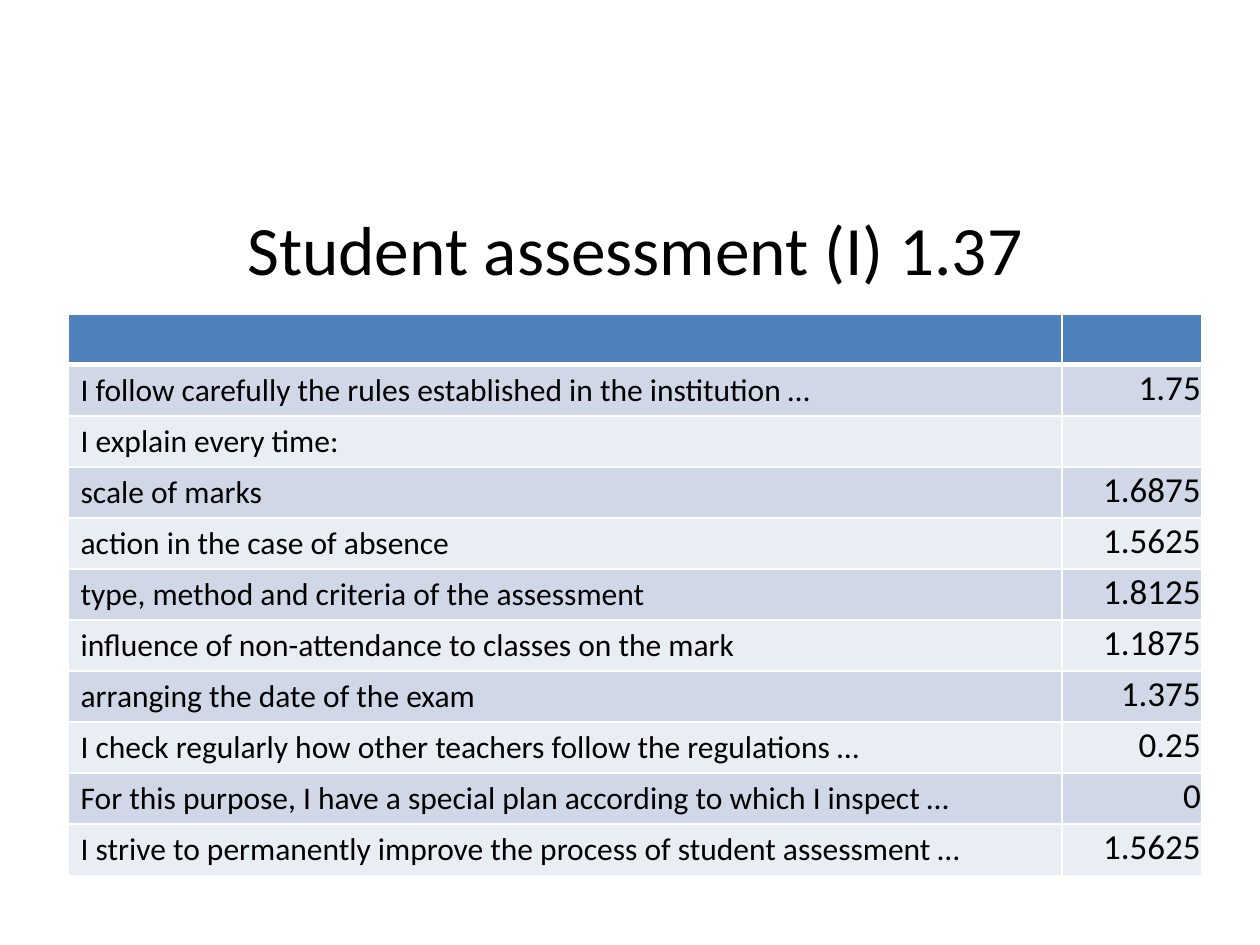
from typing import NamedTuple

from lxml.etree import SubElement
from pptx import Presentation
from pptx.dml.color import RGBColor
from pptx.enum.text import MSO_ANCHOR as Anchor, PP_ALIGN as Align
from pptx.oxml.ns import qn
from pptx.util import Inches, Pt

BLACK = RGBColor(0x00, 0x00, 0x00)
WHITE = RGBColor(0xFF, 0xFF, 0xFF)
HEADER_BLUE = RGBColor(0x4F, 0x81, 0xBD)
BAND_FILLS = (RGBColor(0xD0, 0xD8, 0xE8), RGBColor(0xE9, 0xED, 0xF4))

LEFT, WIDTH = Inches(0.54), Inches(9)
TABLE_TOP, TABLE_HEIGHT = Inches(2.49), Inches(4.46)
COLUMN_WIDTHS = (Inches(7.89), Inches(1.11))

SCORE_FORMAT = {
    "vertical_anchor": Anchor.BOTTOM,
    "margin_left": Inches(0.01),
    "margin_top": Inches(0.01),
    "margin_right": Inches(0.01),
    "margin_bottom": Inches(0.05),
}


class Item(NamedTuple):
    statement: str
    score: str = ""


ITEMS = (
    Item("I follow carefully the rules established in the institution …", "1.75"),
    Item("I explain every time:"),
    Item("scale of marks", "1.6875"),
    Item("action in the case of absence", "1.5625"),
    Item("type, method and criteria of the assessment", "1.8125"),
    Item("influence of non-attendance to classes on the mark", "1.1875"),
    Item("arranging the date of the exam", "1.375"),
    Item("I check regularly how other teachers follow the regulations …", "0.25"),
    Item("For this purpose, I have a special plan according to which I inspect …", "0"),
    Item("I strive to permanently improve the process of student assessment …", "1.5625"),
)


def write(tf, text: str, size: float, align: Align) -> None:
    p = tf.paragraphs[0]
    p.alignment = align
    r = p.add_run()
    r.text = text
    r.font.name = "Calibri"
    r.font.size = Pt(size)
    r.font.color.rgb = BLACK


def style_cell(cell, fill: RGBColor, bottom_width: float = 1) -> None:
    """Give the cell white borders, then its fill."""
    tc_pr = cell._tc.get_or_add_tcPr()
    widths = {"lnL": 1, "lnR": 1, "lnT": 1, "lnB": bottom_width}
    for tag, width in widths.items():
        line = SubElement(tc_pr, qn(f"a:{tag}"), w=str(Pt(width)))
        solid = SubElement(line, qn("a:solidFill"))
        SubElement(solid, qn("a:srgbClr"), val=str(WHITE))
    cell.fill.solid()
    cell.fill.fore_color.rgb = fill


def add_title(s, text: str) -> None:
    tf = s.shapes.add_textbox(LEFT, Inches(1.7), WIDTH, Inches(0.54)).text_frame
    tf.word_wrap = True
    tf.vertical_anchor = Anchor.MIDDLE
    write(tf, text, 39.6, Align.CENTER)


def add_score_table(s, items: tuple[Item, ...]) -> None:
    row_count = len(items) + 1
    table = s.shapes.add_table(
        row_count, len(COLUMN_WIDTHS), LEFT, TABLE_TOP, WIDTH, TABLE_HEIGHT
    ).table
    for column, width in zip(table.columns, COLUMN_WIDTHS):
        column.width = width
    for row in table.rows:
        row.height = TABLE_HEIGHT // row_count

    for cell in table.rows[0].cells:
        style_cell(cell, HEADER_BLUE, bottom_width=3)
    for i, item in enumerate(items):
        statement, score = table.rows[i + 1].cells
        for cell in (statement, score):
            style_cell(cell, BAND_FILLS[i % 2])
        write(statement.text_frame, item.statement, 18, Align.LEFT)
        if item.score:
            for name, value in SCORE_FORMAT.items():
                setattr(score, name, value)
            write(score.text_frame, item.score, 20, Align.RIGHT)


def main() -> None:
    prs = Presentation()
    prs.slide_width, prs.slide_height = Inches(10), Inches(7.5)
    s = prs.slides.add_slide(prs.slide_layouts[6])
    add_title(s, "Student assessment (I) 1.37")
    add_score_table(s, ITEMS)
    prs.save("out.pptx")


if __name__ == "__main__":
    main()
